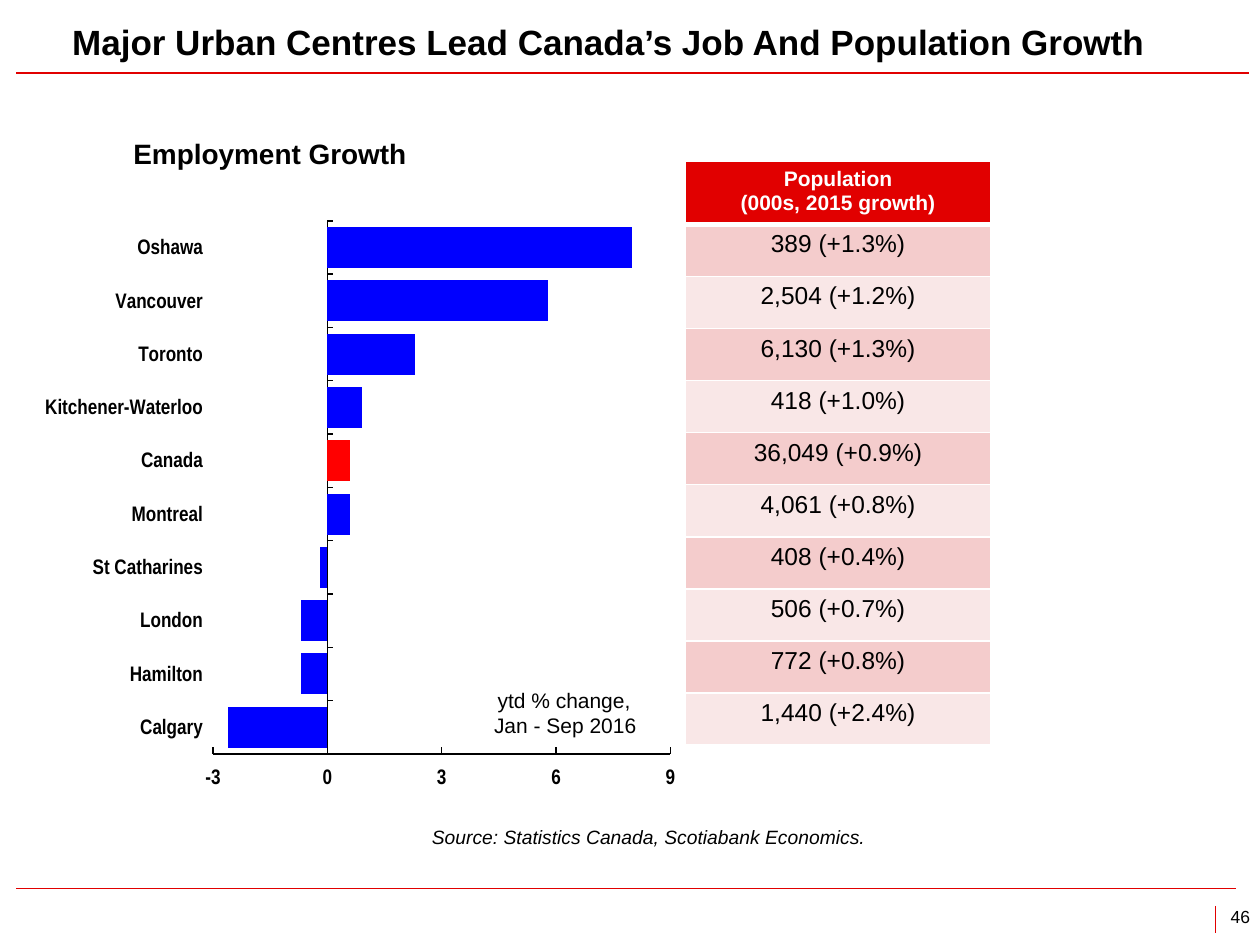
import lxml.etree
import pptx
import pptx.chart.data
import pptx.dml.color
import pptx.enum.chart
import pptx.enum.shapes
import pptx.enum.text
import pptx.oxml.ns
import pptx.util

Cm = pptx.util.Cm
Pt = pptx.util.Pt
RGBColor = pptx.dml.color.RGBColor
Align = pptx.enum.text.PP_ALIGN
Anchor = pptx.enum.text.MSO_ANCHOR

BLACK = RGBColor(0, 0, 0)
WHITE = RGBColor(0xFF, 0xFF, 0xFF)
RED = RGBColor(0xE1, 0, 0)
BAR_BLUE = RGBColor(0, 0, 0xFF)
BAR_RED = RGBColor(0xFF, 0, 0)
BAND_DARK = RGBColor(0xF4, 0xCC, 0xCC)
BAND_LIGHT = RGBColor(0xF9, 0xE7, 0xE7)

# City, employment growth, population; from top to bottom
CENTRES = [
    ("Oshawa", 8, "389 (+1.3%)"),
    ("Vancouver", 5.8, "2,504 (+1.2%)"),
    ("Toronto", 2.3, "6,130 (+1.3%)"),
    ("Kitchener-Waterloo", 0.9, "418 (+1.0%)"),
    ("Canada", 0.6, "36,049 (+0.9%)"),
    ("Montreal", 0.6, "4,061 (+0.8%)"),
    ("St Catharines", -0.2, "408 (+0.4%)"),
    ("London", -0.7, "506 (+0.7%)"),
    ("Hamilton", -0.7, "772 (+0.8%)"),
    ("Calgary", -2.6, "1,440 (+2.4%)"),
]


def set_font(font, size, color=BLACK, bold=False, italic=False):
    font.name = "Arial"
    font.size = Pt(size)
    font.color.rgb = color
    font.bold = bold
    font.italic = italic


def add_rule(slide, x1, y1, x2, y2):
    rule = slide.shapes.add_connector(
        pptx.enum.shapes.MSO_CONNECTOR.STRAIGHT, Cm(x1), Cm(y1), Cm(x2), Cm(y2))
    rule.line.color.rgb = RED
    rule.line.width = Pt(0.75)
    properties = rule._element.spPr
    lxml.etree.SubElement(properties, pptx.oxml.ns.qn("a:effectLst"))


def add_text(slide, text, left, top, width, height, size,
             align=Align.LEFT, bold=False, italic=False):
    box = slide.shapes.add_textbox(Cm(left), Cm(top), Cm(width), Cm(height))
    frame = box.text_frame
    frame.word_wrap = True
    para = frame.paragraphs[0]
    para.text = text
    para.alignment = align
    set_font(para.font, size, bold=bold, italic=italic)
    return frame


def format_title(slide, text):
    title = slide.shapes.title
    title.left, title.top = Cm(1.2), Cm(0.3)
    title.width, title.height = Cm(23.32), Cm(1.07)
    frame = title.text_frame
    frame.vertical_anchor = Anchor.MIDDLE
    para = frame.paragraphs[0]
    para.text = text
    para.alignment = Align.LEFT
    set_font(para.font, 20, bold=True)


def format_axis(axis):
    axis.has_major_gridlines = False
    axis.major_tick_mark = pptx.enum.chart.XL_TICK_MARK.INSIDE
    axis.minor_tick_mark = pptx.enum.chart.XL_TICK_MARK.NONE
    axis.tick_label_position = pptx.enum.chart.XL_TICK_LABEL_POSITION.LOW
    axis.format.line.color.rgb = BLACK
    axis.format.line.width = Pt(1)
    set_font(axis.tick_labels.font, 12, bold=True)


def set_plot_area(chart, x, y, width, height):
    """Place the inner plot area, in fractions of the chart."""
    qn = pptx.oxml.ns.qn
    plot_area = chart._chartSpace.chart.plotArea
    for old in plot_area.findall(qn("c:layout")):
        plot_area.remove(old)
    layout = lxml.etree.Element(qn("c:layout"))
    manual = lxml.etree.SubElement(layout, qn("c:manualLayout"))
    settings = [("layoutTarget", "inner"), ("xMode", "edge"), ("yMode", "edge"),
                ("x", x), ("y", y), ("w", width), ("h", height)]
    for name, value in settings:
        lxml.etree.SubElement(manual, qn("c:" + name)).set("val", str(value))
    plot_area.insert(0, layout)


def add_employment_chart(slide):
    data = pptx.chart.data.CategoryChartData()
    rows = CENTRES[::-1]
    data.categories = [city for city, _, _ in rows]
    data.add_series("Series 1", [growth for _, growth, _ in rows])
    chart = slide.shapes.add_chart(
        pptx.enum.chart.XL_CHART_TYPE.BAR_CLUSTERED,
        Cm(0.91), Cm(4.06), Cm(12.88), Cm(12.27), data).chart
    set_font(chart.font, 12, bold=True)
    chart.has_legend = False
    chart.has_title = False
    set_plot_area(chart, 0.095, 0.032, 0.879, 0.876)

    plot = chart.plots[0]
    plot.gap_width = 30
    plot.vary_by_categories = False
    series = plot.series[0]
    series.invert_if_negative = False
    series.format.fill.solid()
    series.format.fill.fore_color.rgb = BAR_BLUE
    canada = series.points[[city for city, _, _ in rows].index("Canada")]
    canada.format.fill.solid()
    canada.format.fill.fore_color.rgb = BAR_RED

    format_axis(chart.category_axis)
    scale = chart.value_axis
    format_axis(scale)
    scale.minimum_scale, scale.maximum_scale, scale.major_unit = -3, 9, 3
    scale.tick_labels.number_format = "#,##0"
    scale.tick_labels.number_format_is_linked = False


def add_cell_border(cell, side, width):
    qn = pptx.oxml.ns.qn
    properties = cell._tc.get_or_add_tcPr()
    line = lxml.etree.SubElement(properties, qn("a:ln" + side), w=str(Pt(width)))
    fill = lxml.etree.SubElement(line, qn("a:solidFill"))
    lxml.etree.SubElement(fill, qn("a:srgbClr"), val=str(WHITE))


def fill_cell(cell, text, fill, size, color=BLACK, bold=False, bottom=1, top=1):
    for side, width in (("L", 1), ("R", 1), ("T", top), ("B", bottom)):
        add_cell_border(cell, side, width)
    cell.fill.solid()
    cell.fill.fore_color.rgb = fill
    para = cell.text_frame.paragraphs[0]
    para.text = text
    para.alignment = Align.CENTER
    set_font(para.font, size, color, bold)


def add_population_table(slide):
    table = slide.shapes.add_table(
        len(CENTRES) + 1, 1, Cm(13.82), Cm(3.25), Cm(6.15), Cm(11.81)).table
    table.rows[0].height = Cm(1.24)
    fill_cell(table.cell(0, 0), "Population\v(000s, 2015 growth)",
              RED, 12, WHITE, bold=True, bottom=3)
    for index, (_, _, population) in enumerate(CENTRES, start=1):
        table.rows[index].height = Cm(1.05)
        fill_cell(table.cell(index, 0), population,
                  BAND_DARK if index % 2 else BAND_LIGHT, 14,
                  top=3 if index == 1 else 1)


def add_page_number(slide, number):
    frame = add_text(slide, number, 24.31, 18.26, 0.89, 0.43, 10, Align.RIGHT)
    frame.margin_left = frame.margin_right = 0
    frame.margin_top = frame.margin_bottom = 0


def main():
    deck = pptx.Presentation()
    deck.slide_width, deck.slide_height = Cm(25.4), Cm(19.05)
    slide = deck.slides.add_slide(deck.slide_layouts[5])
    add_rule(slide, 0.33, 1.47, 25.17, 1.47)
    add_rule(slide, 0.33, 17.91, 24.92, 17.91)
    add_rule(slide, 24.51, 18.26, 24.51, 18.8)
    add_page_number(slide, "46")
    format_title(slide, "Major Urban Centres Lead Canada’s Job And Population Growth")
    add_text(slide, "Source: Statistics Canada, Scotiabank Economics.",
             1.27, 16.51, 23.62, 0.74, 11, Align.CENTER, italic=True)
    add_employment_chart(slide)
    add_text(slide, "Employment Growth", 2.44, 2.62, 11.86, 0.94, 16, bold=True)
    add_text(slide, "ytd % change, \vJan - Sep 2016",
             7.85, 13.74, 5.23, 1.27, 12, Align.RIGHT)
    add_population_table(slide)
    deck.save("out.pptx")


if __name__ == "__main__":
    main()
